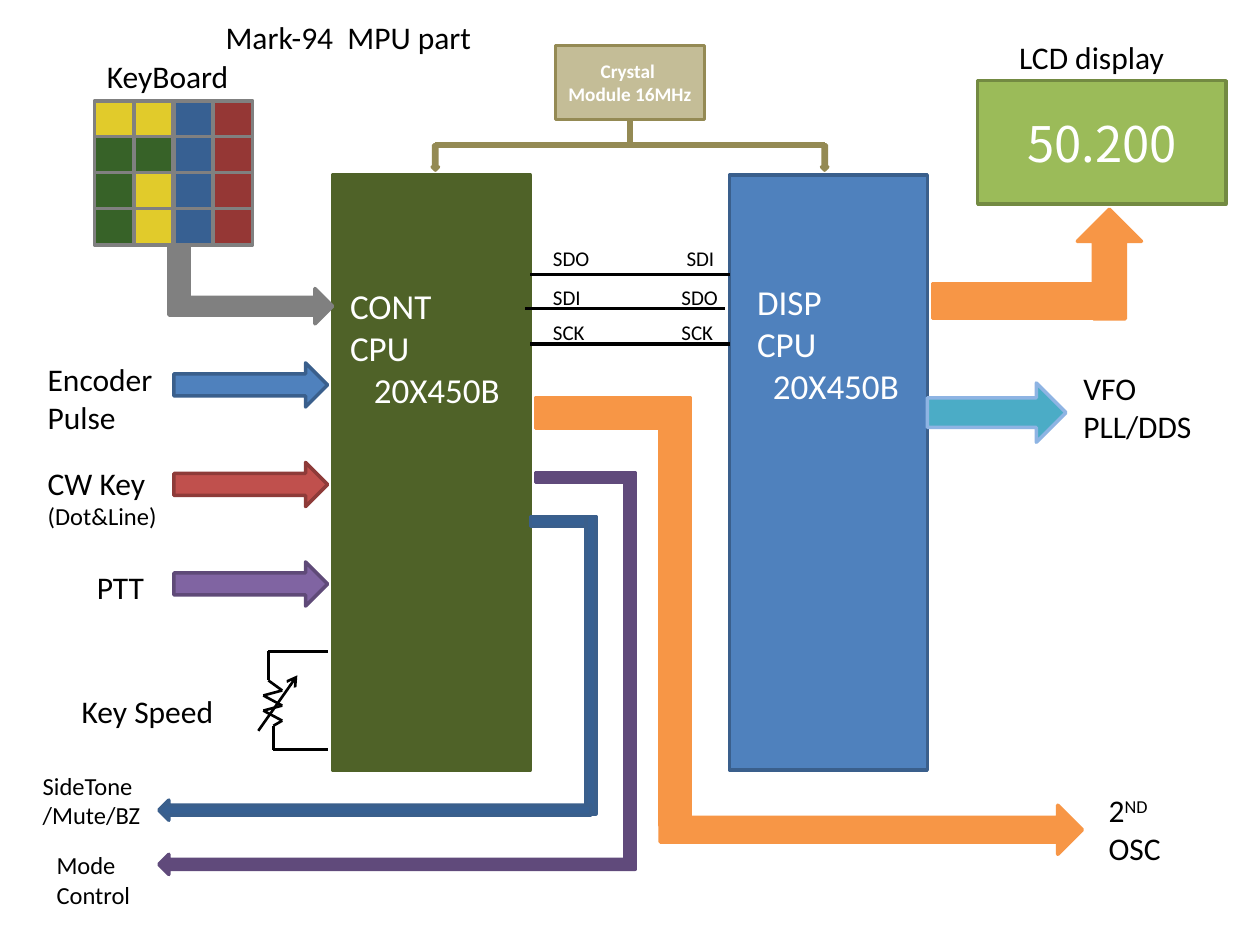
"""Build the MPU block diagram slide."""
from dataclasses import dataclass
from itertools import pairwise

from lxml import etree
from pptx import Presentation
from pptx import util as u
from pptx.dml.color import RGBColor
from pptx.enum import shapes, text
from pptx.oxml.ns import qn

PX = u.Inches(1) // 100
RECT = shapes.MSO_SHAPE.RECTANGLE
RIGHT = shapes.MSO_SHAPE.RIGHT_ARROW
DOWN = shapes.MSO_SHAPE.DOWN_ARROW
ORANGE, PURPLE, NAVY, GRAY, TAN = "F79646", "604A7B", "376092", "808080", "948A54"
NAVY_EDGE = "3A5F8C"


@dataclass
class Block:
    """A filled preset shape."""

    left: float
    top: float
    width: float
    height: float
    fill: str
    line: str
    kind: shapes.MSO_SHAPE = RECT
    rotation: int = 0


@dataclass
class Label:
    """A text box with one paragraph per line of content."""

    left: int
    top: int
    width: int
    height: int
    content: str
    size: int = 18
    last_size: int | None = None
    color: str = "000000"
    wrap: bool = False


@dataclass
class Wire:
    """A chain of straight connectors through several points."""

    points: list[tuple[int, int]]
    weight: float
    color: str = "000000"
    arrow: bool = False


PROCESSORS = [
    Block(264, 139, 157, 472, "4F6228", "4F6228"),
    Block(579, 139, 157, 472, "4F81BD", NAVY_EDGE),
]
DISPLAY = Block(776, 64, 197, 98, "9BBB59", "738A42")
CRYSTAL = Block(441, 36, 118, 59, "C4BD97", TAN)
BUSES = [
    Block(740, 225, 150, 28, ORANGE, ORANGE),
    Block(837, 184, 87, 51, ORANGE, ORANGE, RIGHT, 270),
    Block(736, 304, 110, 47, "4BACC6", "8EB4E3", RIGHT),
    Block(425, 316, 122, 24, ORANGE, ORANGE),
    Block(524, 316, 24, 339, ORANGE, ORANGE),
    Block(524, 639, 335, 39, ORANGE, ORANGE, RIGHT),
    Block(134, 194, 16, 51, GRAY, GRAY),
    Block(134, 229, 130, 28, GRAY, GRAY, RIGHT),
    Block(425, 375, 75, 8, PURPLE, PURPLE),
    Block(496, 375, 8, 315, PURPLE, PURPLE),
    Block(126, 678, 378, 16, PURPLE, PURPLE, RIGHT, 180),
    Block(421, 410, 51, 8, NAVY, NAVY_EDGE),
    Block(465, 410, 8, 236, NAVY, NAVY_EDGE),
    Block(126, 635, 343, 16, NAVY, NAVY_EDGE, RIGHT, 180),
]
INPUT_COLORS = [("4F81BD", NAVY_EDGE), ("C0504D", "8E3B39"), ("8064A2", "5F4A78")]
INPUTS = [
    Block(138, 288 + 79 * row, 122, 35, fill, line, RIGHT)
    for row, (fill, line) in enumerate(INPUT_COLORS)
]
CLOCK_ARROWS = [Block(left, 115, 5, 20, "4F81BD", TAN, DOWN) for left in (343, 652)]
KEY_COLORS = {"Y": "E1CB2B", "B": NAVY, "R": "953735", "G": "376228"}
KEYS = [
    Block(75 + 31.5 * column, 80 + 28.5 * row, 31, 29, KEY_COLORS[key], GRAY)
    for row, keys in enumerate(["YYBR", "GGBR", "GYBR", "GYBR"])
    for column, key in enumerate(keys)
]
WIRES = [
    Wire([(421, 218), (579, 218)], 1.75),
    Wire([(417, 245), (575, 245)], 1.75),
    Wire([(421, 273), (579, 273)], 1.75),
    Wire([(260, 517), (213, 517), (213, 540), (224, 548), (209, 552), (224, 560),
          (209, 564), (224, 572), (217, 576), (217, 595), (260, 595)], 1.5),
    Wire([(205, 580), (236, 536)], 1.5, arrow=True),
    Wire([(345, 115), (655, 115)], 3, TAN),
]
LABELS = [
    Label(268, 221, 151, 77, "CONT　CPU\n   20X450B", 20, color="FFFFFF", wrap=True),
    Label(591, 218, 138, 77, "DISP　CPU\n  20X450B", 20, color="FFFFFF", wrap=True),
    Label(799, 25, 137, 40, "LCD display"),
    Label(850, 288, 107, 71, "VFO\nPLL/DDS"),
    Label(28, 281, 104, 71, "Encoder\nPulse"),
    Label(28, 363, 107, 64, "CW Key\n(Dot&Line)", last_size=14),
    Label(67, 446, 58, 40, "PTT"),
    Label(870, 623, 62, 91, "2^ND\nOSC"),
    Label(55, 544, 126, 40, "Key Speed"),
    Label(429, 190, 49, 30, "SDO", 12),
    Label(429, 221, 42, 30, "SDI", 12),
    Label(429, 249, 46, 50, "SCK", 12),
    Label(535, 190, 42, 30, "SDI", 12),
    Label(531, 221, 55, 30, "SDO", 12, wrap=True),
    Label(531, 249, 46, 50, "SCK", 12),
    Label(75, 40, 118, 40, "KeyBoard"),
    Label(35, 670, 79, 57, "Mode\nControl", 14),
    Label(24, 607, 98, 57, "SideTone\n/Mute/BZ", 14),
]


def px(value: float) -> int:
    """Turn px into EMU."""
    return round(value * PX)


def rgb(value: str) -> RGBColor:
    """Turn a hex string into a colour."""
    return RGBColor.from_string(value)


def write_text(frame, content: str, *, size=18, last_size=None, color="000000",
               font="Calibri", bold=False, align=text.PP_ALIGN.LEFT) -> None:
    """Fill a frame line by line; a caret starts a superscript."""
    lines = content.split("\n")
    for index, line in enumerate(lines):
        paragraph = frame.add_paragraph() if index else frame.paragraphs[0]
        paragraph.alignment = align
        is_last = index == len(lines) - 1
        for position, part in enumerate(line.split("^")):
            run = paragraph.add_run()
            run.text = part
            run.font.name, run.font.bold = font, bold
            run.font.size = u.Pt(last_size if last_size and is_last else size)
            run.font.color.rgb = rgb(color)
            if position:
                run._r.get_or_add_rPr().set("baseline", "30000")


def draw_block(slide, block: Block):
    """Draw one filled shape."""
    shape = slide.shapes.add_shape(
        block.kind, *map(px, (block.left, block.top, block.width, block.height)))
    shape.shadow.inherit = False
    shape.rotation = block.rotation
    shape.fill.solid()
    shape.fill.fore_color.rgb = rgb(block.fill)
    shape.line.color.rgb = rgb(block.line)
    shape.line.width = u.Pt(2)
    return shape


def draw_wire(slide, wire: Wire):
    """Draw the connectors of a wire and return the last one."""
    for start, end in pairwise(wire.points):
        connector = slide.shapes.add_connector(
            shapes.MSO_CONNECTOR.STRAIGHT, *map(px, start + end))
        connector.line.color.rgb = rgb(wire.color)
        connector.line.width = u.Pt(wire.weight)
        etree.SubElement(connector._element.spPr, qn("a:effectLst"))
    if wire.arrow:
        etree.SubElement(connector.line._get_or_add_ln(), qn("a:tailEnd"), type="arrow")
    return connector


def draw_label(slide, label: Label) -> None:
    """Draw one text box."""
    box = slide.shapes.add_textbox(
        *map(px, (label.left, label.top, label.width, label.height)))
    box.text_frame.word_wrap = label.wrap
    box.text_frame.auto_size = text.MSO_AUTO_SIZE.SHAPE_TO_FIT_TEXT
    write_text(box.text_frame, label.content, size=label.size,
               last_size=label.last_size, color=label.color)


def place_title(slide, content: str) -> None:
    """Move and format the title placeholder."""
    title = slide.shapes.title
    title.left, title.top, title.width, title.height = map(px, (169, 9, 218, 40))
    frame = title.text_frame
    frame.word_wrap = False
    frame.auto_size = text.MSO_AUTO_SIZE.NONE
    frame.vertical_anchor = text.MSO_ANCHOR.TOP
    write_text(frame, content)


def main() -> None:
    """Build and save the slide."""
    presentation = Presentation()
    presentation.slide_width, presentation.slide_height = px(1000), px(750)
    slide = presentation.slides.add_slide(presentation.slide_layouts[5])
    place_title(slide, "Mark-94  MPU part")
    for block in PROCESSORS + BUSES + INPUTS + CLOCK_ARROWS + KEYS:
        draw_block(slide, block)
    for wire in WIRES:
        draw_wire(slide, wire)
    center = text.PP_ALIGN.CENTER
    write_text(draw_block(slide, DISPLAY).text_frame, "50.200", size=28,
               color="FFFFFF", font="Noto Sans CJK JP", align=center)
    crystal = draw_block(slide, CRYSTAL)
    write_text(crystal.text_frame, "Crystal  Module 16MHz", size=11,
               color="FFFFFF", bold=True, align=center)
    draw_wire(slide, Wire([(500, 95), (500, 115)], 3, TAN)).begin_connect(crystal, 2)
    for label in LABELS:
        draw_label(slide, label)
    presentation.save("out.pptx")


if __name__ == "__main__":
    main()
